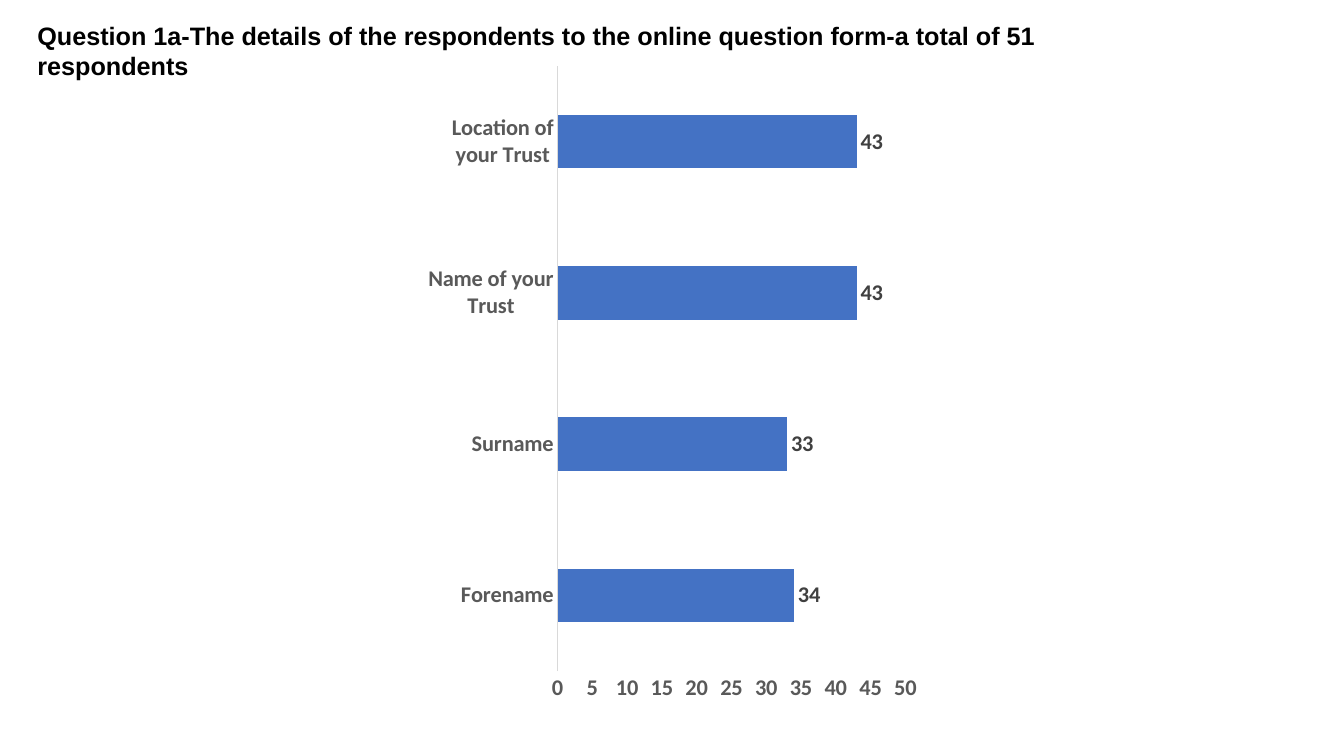
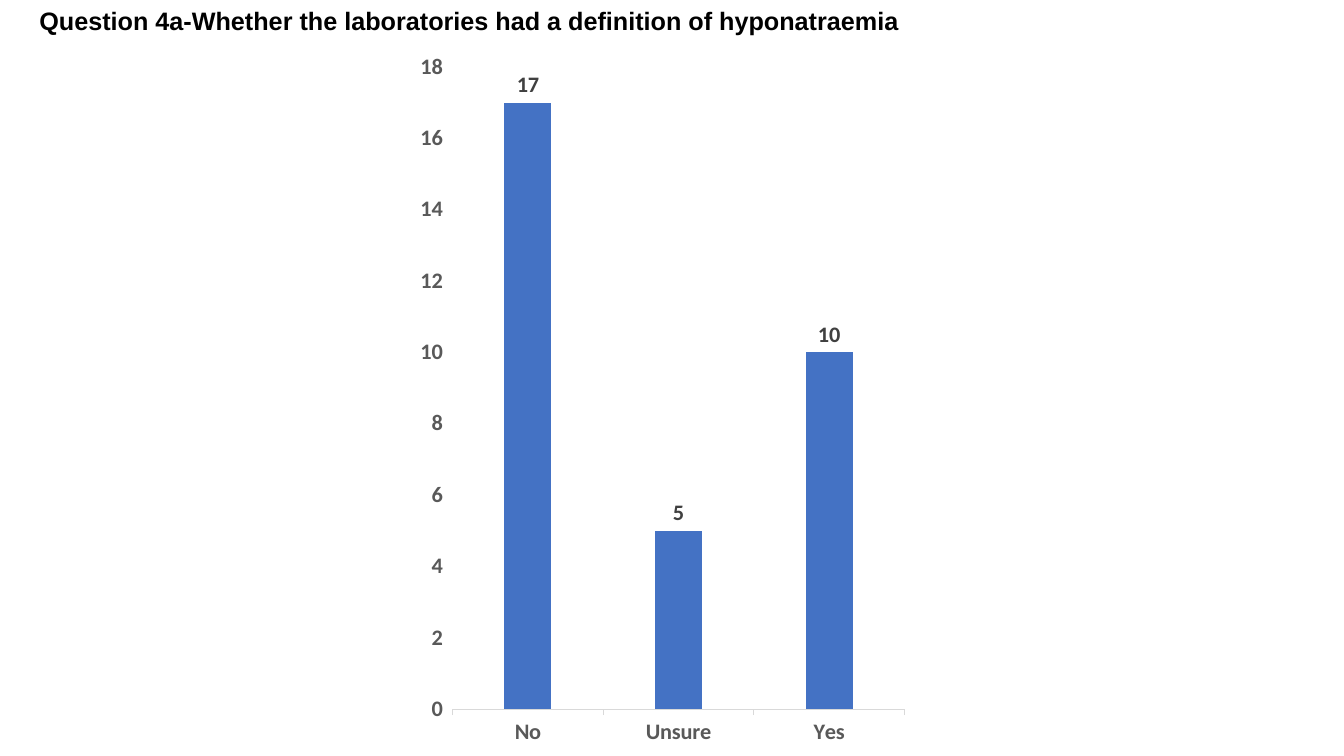
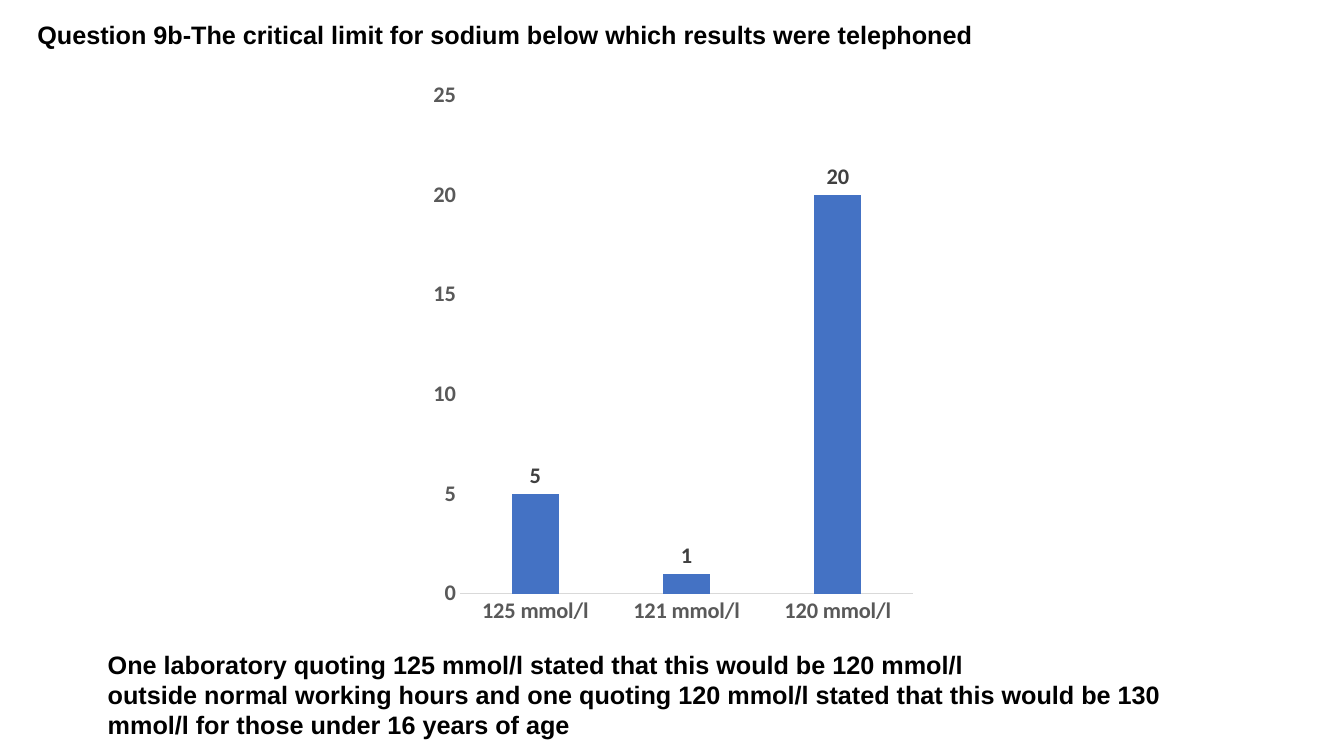
from dataclasses import dataclass

from lxml import etree
from pptx import Presentation, util as u
from pptx.chart.data import CategoryChartData
from pptx.dml.color import RGBColor
from pptx.enum import chart as ch, text as tx
from pptx.oxml.ns import qn

WIDE, HIGH = 13.33, 7.5
BLACK, BLUE, GREY, DARK, PALE = "000000", "4472C4", "595959", "404040", "D9D9D9"
HEAD, LABEL = "Arial", "Calibri"
BAR, COL = ch.XL_CHART_TYPE.BAR_CLUSTERED, ch.XL_CHART_TYPE.COLUMN_CLUSTERED
Box = tuple[float, float, float, float]


@dataclass
class Page:
    title: str
    spot: Box       # title, inches
    kind: ch.XL_CHART_TYPE
    area: Box       # chart, inches
    plot: Box       # plot, shares of the chart
    data: dict[str, int]
    top: int
    step: int
    gap: int = 219
    lap: int = -27
    ticks: bool = False
    note: tuple[str, ...] = ()


PAGES = [
    Page("Question 1a-The details of the respondents to the online question form-a total of 51 respondents",
         (0.27, 0.15, 11.13, 0.4), BAR, (4.23, 0.65, 5, 6.75), (0.26, 0, 0.69, 0.89),
         {"Forename": 34, "Surname": 33, "Name of your Trust": 43,
          "Location of your Trust": 43}, top=50, step=5, gap=182, lap=0),
    Page("Question 4a-Whether the laboratories had a definition of hyponatraemia",
         (0.29, 0, 8.81, 0.4), COL, (4.17, 0.53, 5, 6.87), (0.06, 0.01, 0.9, 0.94),
         {"No": 17, "Unsure": 5, "Yes": 10}, top=18, step=2, ticks=True),
    Page("Question 9b-The critical limit for sodium below which results were telephoned",
         (0.27, 0.14, 9.56, 0.4), COL, (4.21, 0.81, 5, 5.46), (0.07, 0.02, 0.9, 0.91),
         {"125 mmol/l": 5, "121 mmol/l": 1, "120 mmol/l": 20}, top=25, step=5,
         note=("One laboratory quoting 125 mmol/l stated that this would be 120 mmol/l",
               "outside normal working hours and one quoting 120 mmol/l stated that "
               "this would be 130 mmol/l for those under 16 years of age")),
]
NOTE = (0.97, 6.39, 11.22, 1.01)


def inch(box: Box) -> list[u.Length]:
    return [u.Inches(n) for n in box]


def style(font, size: float, color: str, face: str) -> None:
    font.size, font.bold, font.name = u.Pt(size), True, face
    font.color.rgb = RGBColor.from_string(color)


def write(shape, *lines: str, box: Box, wrap: bool = True, size: float = 18,
          color: str = BLACK, face: str = HEAD) -> None:
    """Place a shape and fill it with bold, left-aligned paragraphs."""
    shape.left, shape.top, shape.width, shape.height = inch(box)
    frame = shape.text_frame
    frame.text = "\n".join(lines)
    frame.word_wrap = wrap
    frame.auto_size = tx.MSO_AUTO_SIZE.SHAPE_TO_FIT_TEXT
    frame.vertical_anchor = tx.MSO_ANCHOR.TOP
    for para in frame.paragraphs:
        para.alignment = tx.PP_ALIGN.LEFT
        style(para.runs[0].font, size, color, face)


def pin(chart, plot: Box) -> None:
    """Fix the inner plot area at shares of the chart."""
    area = chart.element.find(".//" + qn("c:plotArea"))
    lay = area.find(qn("c:layout"))
    if lay is None:
        lay = etree.Element(qn("c:layout"))
        area.insert(0, lay)
    man = etree.SubElement(lay, qn("c:manualLayout"))
    parts = [("layoutTarget", "inner"), ("xMode", "edge"), ("yMode", "edge"),
             *zip("xywh", plot)]
    for tag, val in parts:
        etree.SubElement(man, qn(f"c:{tag}"), val=str(val))


def graph(slide, page: Page) -> None:
    data = CategoryChartData()
    data.categories = list(page.data)
    data.add_series("Series 1", list(page.data.values()))
    chart = slide.shapes.add_chart(page.kind, *inch(page.area), data).chart
    chart.has_legend = chart.has_title = False
    style(chart.font, 16, GREY, LABEL)
    pin(chart, page.plot)

    # Bars and their values
    plot = chart.plots[0]
    plot.gap_width, plot.overlap, plot.vary_by_categories = page.gap, page.lap, False
    fill = plot.series[0].format.fill
    fill.solid()
    fill.fore_color.rgb = RGBColor.from_string(BLUE)
    plot.has_data_labels = True
    tags = plot.data_labels
    tags.show_value, tags.position = True, ch.XL_LABEL_POSITION.OUTSIDE_END
    style(tags.font, 16, DARK, LABEL)

    # Axes
    cat, val = chart.category_axis, chart.value_axis
    for axis in (cat, val):
        axis.has_major_gridlines = False
        axis.major_tick_mark = ch.XL_TICK_MARK.OUTSIDE if page.ticks else ch.XL_TICK_MARK.NONE
        axis.minor_tick_mark = ch.XL_TICK_MARK.NONE
        style(axis.tick_labels.font, 16, GREY, LABEL)
    cat.format.line.color.rgb = RGBColor.from_string(PALE)
    cat.format.line.width = u.Pt(0.75)
    val.format.line.fill.background()
    val.minimum_scale, val.maximum_scale, val.major_unit = 0, page.top, page.step


def main() -> None:
    deck = Presentation()
    deck.slide_width, deck.slide_height = u.Inches(WIDE), u.Inches(HIGH)
    for page in PAGES:
        slide = deck.slides.add_slide(deck.slide_layouts.get_by_name("Title Only"))
        graph(slide, page)
        write(slide.shapes.title, page.title, box=page.spot, wrap=False)
        if page.note:
            write(slide.shapes.add_textbox(*inch(NOTE)), *page.note, box=NOTE)
    deck.save("out.pptx")


if __name__ == "__main__":
    main()
